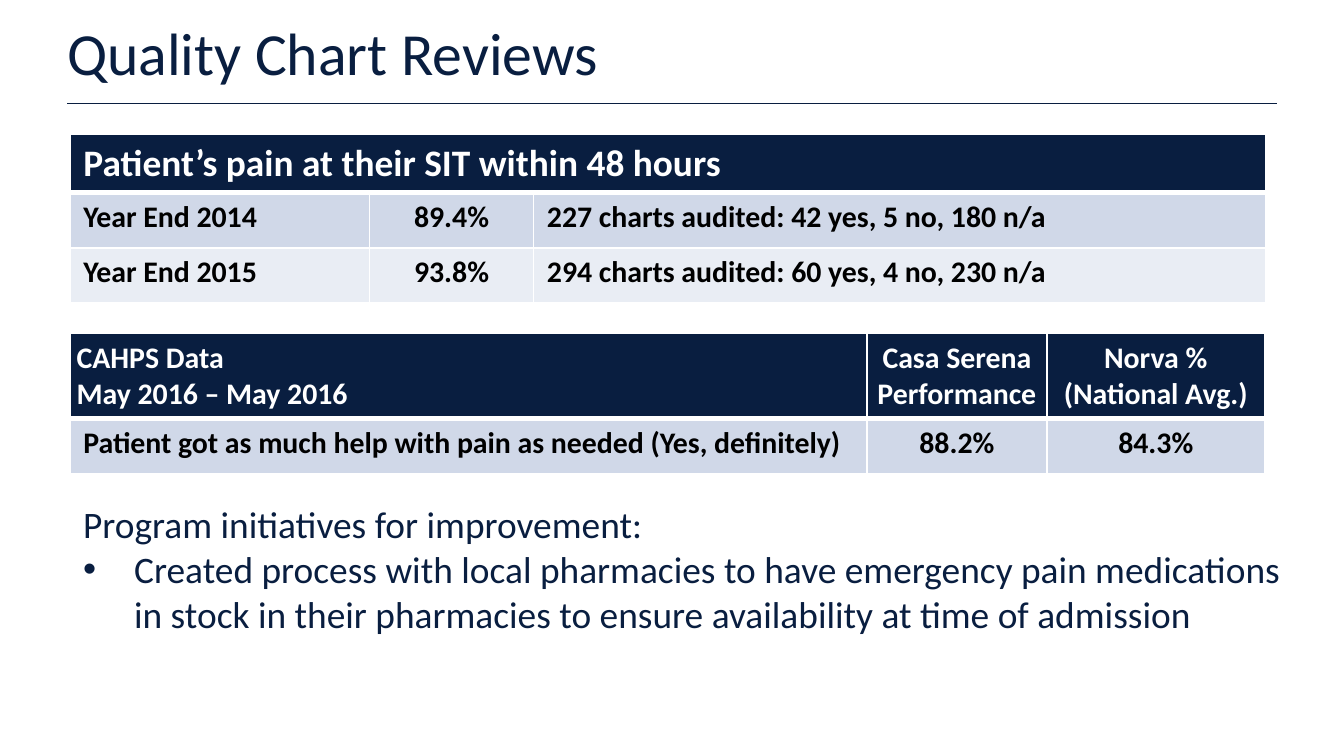
"""Build the Quality Chart Reviews slide with two result tables."""
from dataclasses import dataclass

from lxml import etree
from pptx import Presentation
from pptx.dml.color import RGBColor
from pptx.enum.shapes import MSO_CONNECTOR
from pptx.enum.text import MSO_ANCHOR, PP_ALIGN
from pptx.oxml.ns import qn
from pptx.util import Inches, Pt

LEFT, CENTER = PP_ALIGN.LEFT, PP_ALIGN.CENTER
MIDDLE = MSO_ANCHOR.MIDDLE
STRAIGHT = MSO_CONNECTOR.STRAIGHT


@dataclass(frozen=True)
class Theme:
    font: str = "Calibri"
    navy: str = "091E40"
    white: str = "FFFFFF"
    black: str = "000000"
    bands: tuple = ("D0D8E8", "E9EDF4")
    title: int = 32
    large: int = 20
    small: int = 16


theme = Theme()


def add_run(paragraph, text, size, color, bold=False):
    run = paragraph.add_run()
    run.text = text
    run.font.name = theme.font
    run.font.size = Pt(size)
    run.font.bold = bold
    run.font.color.rgb = RGBColor.from_string(color)


def style_cell(cell, fill, bottom_width):
    properties = cell._tc.get_or_add_tcPr()
    for side, width in (("L", 1), ("R", 1), ("T", 1), ("B", bottom_width)):
        border = etree.SubElement(properties, qn(f"a:ln{side}"), w=str(Pt(width)))
        solid = etree.SubElement(border, qn("a:solidFill"))
        etree.SubElement(solid, qn("a:srgbClr"), val=theme.white)
    cell.fill.solid()
    cell.fill.fore_color.rgb = RGBColor.from_string(fill)


presentation = Presentation()
presentation.slide_width = Inches(10)
presentation.slide_height = Inches(10 * 9 / 16)
slide = presentation.slides.add_slide(presentation.slide_layouts[6])

rule = slide.shapes.add_connector(STRAIGHT, Inches(0.5), Inches(0.77), Inches(9.5), Inches(0.77))
rule.line.color.rgb = RGBColor.from_string(theme.navy)
rule.line.width = Pt(1)
etree.SubElement(rule._element.spPr, qn("a:effectLst"))

title = slide.shapes.add_textbox(0, 0, Inches(10), Inches(0.77)).text_frame
title.word_wrap = True
title.vertical_anchor = MIDDLE
title.margin_left = title.margin_right = Inches(0.5)
title.margin_top = title.margin_bottom = Inches(0.1)
add_run(title.paragraphs[0], "Quality Chart Reviews", theme.title, theme.navy)

tables = [
    {
        "top": 1,
        "columns": [2.23, 1.22, 5.45],
        "heights": [0.41, 0.41, 0.41],
        "header_size": theme.large,
        "header_margin": 0.1,
        "alignments": [LEFT, CENTER, LEFT],
        "rows": [
            ["Patient’s pain at their SIT within 48 hours"],
            ["Year End 2014", "89.4%", "227 charts audited: 42 yes, 5 no, 180 n/a"],
            ["Year End 2015", "93.8%", "294 charts audited: 60 yes, 4 no, 230 n/a"],
        ],
    },
    {
        "top": 2.48,
        "columns": [5.93, 1.34, 1.62],
        "heights": [0.62, 0.41],
        "header_size": theme.small,
        "header_margin": 0.05,
        "alignments": [LEFT, CENTER, CENTER],
        "rows": [
            ["CAHPS Data\nMay 2016 – May 2016", "Casa Serena Performance", "Norva %\n(National Avg.)"],
            ["Patient got as much help with pain as needed (Yes, definitely)", "88.2%", "84.3%"],
        ],
    },
]

for data in tables:
    columns, heights, rows = data["columns"], data["heights"], data["rows"]
    table = slide.shapes.add_table(
        len(heights), len(columns), Inches(0.52), Inches(data["top"]),
        Inches(sum(columns)), Inches(sum(heights)),
    ).table
    for column, width in zip(table.columns, columns):
        column.width = Inches(width)
    for row_index, texts in enumerate(rows):
        table.rows[row_index].height = Inches(heights[row_index])
        is_header = row_index == 0
        fill = theme.navy if is_header else theme.bands[(row_index - 1) % 2]
        size = data["header_size"] if is_header else theme.small
        color = theme.white if is_header else theme.black
        for column_index in range(len(columns)):
            style_cell(table.cell(row_index, column_index), fill, 3 if is_header else 1)
        if len(texts) == 1:
            table.cell(row_index, 0).merge(table.cell(row_index, len(columns) - 1))
        for column_index, text in enumerate(texts):
            cell = table.cell(row_index, column_index)
            if is_header:
                cell.margin_left = cell.margin_right = Inches(data["header_margin"])
            paragraph = cell.text_frame.paragraphs[0]
            paragraph.alignment = data["alignments"][column_index]
            for line_index, line in enumerate(text.split("\n")):
                if line_index:
                    paragraph.add_line_break()
                add_run(paragraph, line, size, color, bold=True)

initiatives = slide.shapes.add_textbox(Inches(0.52), Inches(3.68), Inches(9.16), Inches(1.41)).text_frame
initiatives.word_wrap = True
add_run(initiatives.paragraphs[0], "Program initiatives for improvement:", theme.large, theme.navy)
bullet = initiatives.add_paragraph()
bullet_properties = bullet._p.get_or_add_pPr()
bullet_properties.set("marL", str(Inches(0.38)))
bullet_properties.set("indent", str(Inches(-0.38)))
etree.SubElement(bullet_properties, qn("a:buFont"), typeface="Arial")
etree.SubElement(bullet_properties, qn("a:buChar"), char="•")
add_run(
    bullet,
    "Created process with local pharmacies to have emergency pain medications "
    "in stock in their pharmacies to ensure availability at time of admission",
    theme.large, theme.navy,
)

presentation.save("out.pptx")
